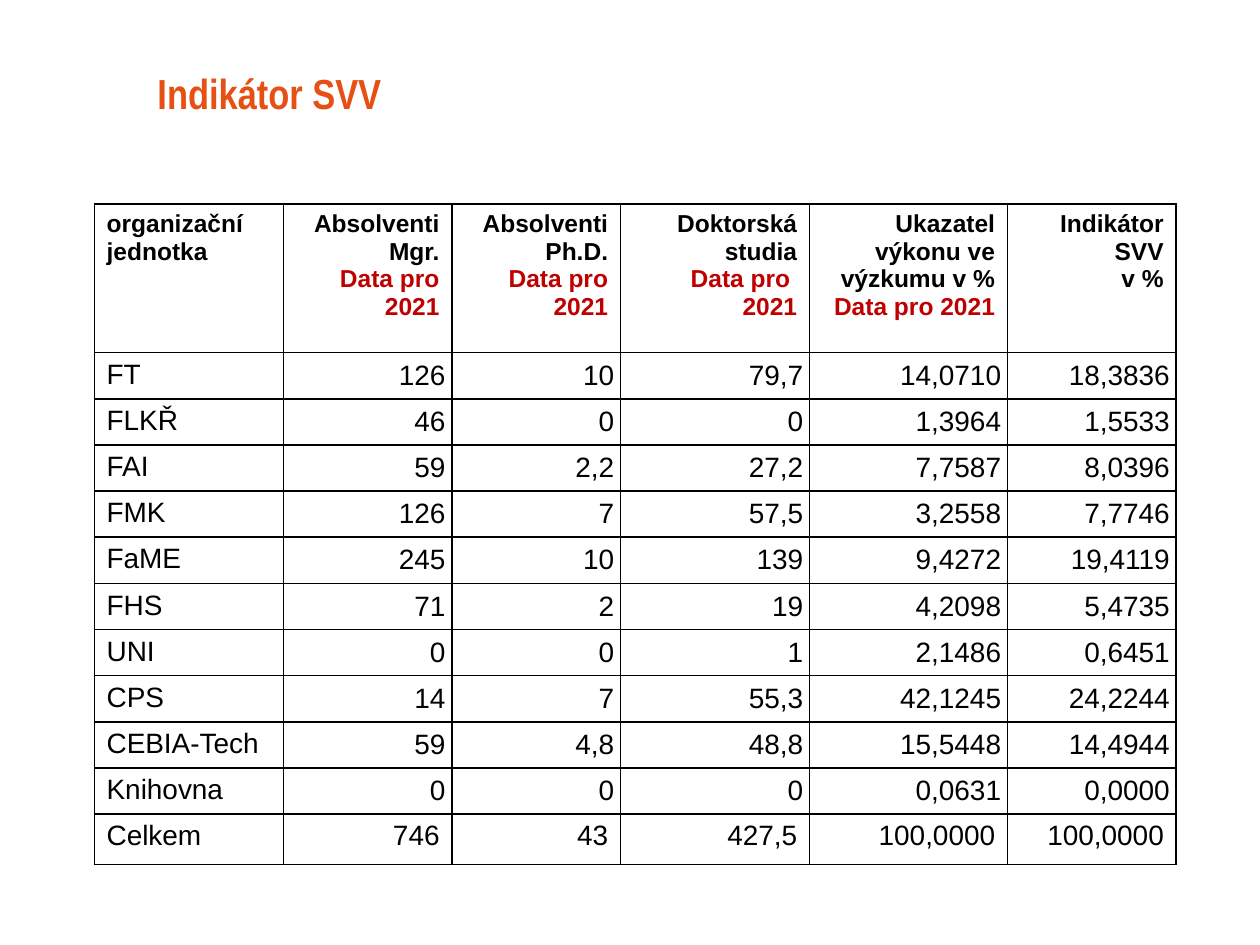
"""Build the slide with the SVV indicator table."""
from lxml.etree import SubElement
from pptx import Presentation
from pptx.dml.color import RGBColor
from pptx.enum.text import MSO_ANCHOR as Anchor, PP_ALIGN as Align
from pptx.oxml.ns import qn
from pptx.util import Cm, Pt

BLACK, RED, ORANGE = "000000", "C00000", "E65014"


def add_text(paragraph, text, size, color, bold=False, font="Arial", align=Align.LEFT):
    paragraph.alignment = align
    run = paragraph.add_run()
    run.text = text
    run.font.name = font
    run.font.size = Pt(size)
    run.font.bold = bold
    run.font.color.rgb = RGBColor.from_string(color)


def add_borders(cell):
    properties = cell._tc.get_or_add_tcPr()
    for side in ("lnL", "lnR", "lnT", "lnB"):
        line = SubElement(properties, qn(f"a:{side}"), w=str(Pt(1)))
        fill = SubElement(line, qn("a:solidFill"))
        SubElement(fill, qn("a:srgbClr"), val=BLACK)


headers = [
    [("organizační jednotka", BLACK)],
    [("Absolventi Mgr.", BLACK), ("Data pro 2021", RED)],
    [("Absolventi Ph.D.", BLACK), ("Data pro 2021", RED)],
    [("Doktorská studia", BLACK), ("Data pro ", RED), ("2021", RED)],
    [("Ukazatel výkonu ve výzkumu v %", BLACK), ("Data pro 2021", RED)],
    [("Indikátor SVV", BLACK), ("v %", BLACK)],
]
units = [
    ("FT", "126", "10", "79,7", "14,0710", "18,3836"),
    ("FLKŘ", "46", "0", "0", "1,3964", "1,5533"),
    ("FAI", "59", "2,2", "27,2", "7,7587", "8,0396"),
    ("FMK", "126", "7", "57,5", "3,2558", "7,7746"),
    ("FaME", "245", "10", "139", "9,4272", "19,4119"),
    ("FHS", "71", "2", "19", "4,2098", "5,4735"),
    ("UNI", "0", "0", "1", "2,1486", "0,6451"),
    ("CPS", "14", "7", "55,3", "42,1245", "24,2244"),
    ("CEBIA-Tech", "59", "4,8", "48,8", "15,5448", "14,4944"),
    ("Knihovna", "0", "0", "0", "0,0631", "0,0000"),
    ("Celkem", "746", "43", "427,5", "100,0000", "100,0000"),
]
column_widths = [3.81, 3.4, 3.4, 3.81, 3.99, 3.4]
row_heights = [3] + [0.93] * 10 + [1.02]

presentation = Presentation()
presentation.slide_width, presentation.slide_height = Cm(25.4), Cm(19.05)
slide = presentation.slides.add_slide(presentation.slide_layouts[5])

title = slide.shapes.title
title.left, title.top, title.width, title.height = Cm(2.92), Cm(0.91), Cm(21.92), Cm(1.93)
title.text_frame.vertical_anchor = Anchor.MIDDLE
add_text(title.text_frame.paragraphs[0], "Indikátor SVV", 24, ORANGE, True, "Arial Narrow")

table = slide.shapes.add_table(
    len(row_heights), len(column_widths), Cm(1.9), Cm(4.11),
    Cm(sum(column_widths)), Cm(sum(row_heights)),
).table
table.first_row = table.horz_banding = False
for column, width in zip(table.columns, column_widths):
    column.width = Cm(width)
for row, height in zip(table.rows, row_heights):
    row.height = Cm(height)

rows = [headers] + [[[(text, BLACK)] for text in unit] for unit in units]
for row_index, row in enumerate(rows):
    is_header = row_index == 0
    for column_index, lines in enumerate(row):
        cell = table.cell(row_index, column_index)
        add_borders(cell)
        cell.fill.background()
        is_value = column_index > 0 and 0 < row_index < len(rows) - 1
        cell.vertical_anchor = Anchor.MIDDLE if is_value else Anchor.TOP
        cell.margin_left = cell.margin_right = Cm(0.13 if is_value else 0.25)
        cell.margin_top = cell.margin_bottom = Cm(0 if is_value else 0.13)
        align = Align.RIGHT if column_index else Align.LEFT
        for line_index, (text, color) in enumerate(lines):
            frame = cell.text_frame
            paragraph = frame.add_paragraph() if line_index else frame.paragraphs[0]
            add_text(paragraph, text, 14 if is_header else 16, color, is_header, align=align)

presentation.save("out.pptx")
